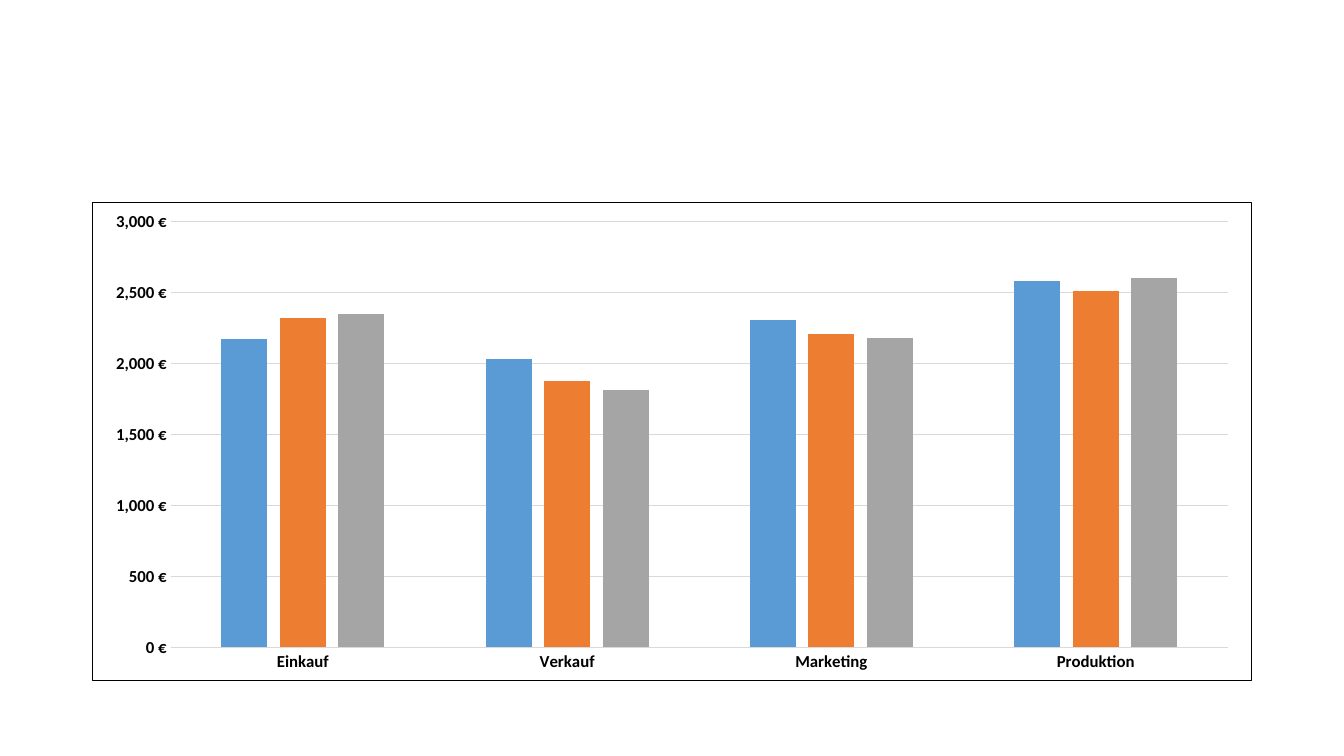
from lxml.etree import fromstring
from pptx import Presentation
from pptx.chart.data import CategoryChartData
from pptx.dml.color import RGBColor
from pptx.enum.chart import XL_CHART_TYPE, XL_TICK_MARK
from pptx.util import Emu, Pt

BLACK = RGBColor(0x00, 0x00, 0x00)
WHITE = RGBColor(0xFF, 0xFF, 0xFF)
SILVER = RGBColor(0xD9, 0xD9, 0xD9)
BLUE = RGBColor(0x5B, 0x9B, 0xD5)
ORANGE = RGBColor(0xED, 0x7D, 0x31)
GREY = RGBColor(0xA5, 0xA5, 0xA5)

AREAS = ["Einkauf", "Verkauf", "Marketing", "Produktion"]
COSTS = [
    ("Series 1", [2170, 2030, 2310, 2580], BLUE),
    ("Series 2", [2320, 1880, 2210, 2510], ORANGE),
    ("Series 3", [2350, 1810, 2180, 2600], GREY),
]

FRAME = """<c:spPr xmlns:c="http://schemas.openxmlformats.org/drawingml/2006/chart"
  xmlns:a="http://schemas.openxmlformats.org/drawingml/2006/main">
  <a:solidFill><a:srgbClr val="{fill}"/></a:solidFill>
  <a:ln w="{width}"><a:solidFill><a:srgbClr val="{line}"/></a:solidFill></a:ln>
</c:spPr>"""


class Painter:
    """Holds the style and the current slide, and adds elements measured in px."""

    scale = 9525
    face = "Calibri"
    thin = Pt(0.75)

    def __init__(self, deck):
        deck.slide_width, deck.slide_height = self.px(1280), self.px(720)
        self.slide = deck.slides.add_slide(deck.slide_layouts[6])

    def px(self, count):
        return Emu(count * self.scale)

    def font(self, font, size, bold=False):
        font.name, font.size, font.bold = self.face, Pt(size), bold
        font.color.rgb = BLACK

    def line(self, line, color):
        line.color.rgb = color
        line.width = self.thin

    def axis(self, axis):
        axis.major_tick_mark = axis.minor_tick_mark = XL_TICK_MARK.NONE
        self.font(axis.tick_labels.font, 12, True)

    def frame(self, chart):
        xml = FRAME.format(fill=WHITE, line=BLACK, width=int(self.thin))
        chart.font._element.getparent()
        chart._chartSpace.chart.addnext(fromstring(xml))

    def columns(self, box, names, series, unit):
        data = CategoryChartData()
        data.categories = names
        for name, values, _ in series:
            data.add_series(name, values)
        kind = XL_CHART_TYPE.COLUMN_CLUSTERED
        chart = self.slide.shapes.add_chart(kind, *map(self.px, box), data).chart
        chart.has_title = chart.has_legend = False
        self.font(chart.font, 10)

        plot = chart.plots[0]
        plot.vary_by_categories = False
        plot.gap_width, plot.overlap = 219, -27
        for bars, (_, _, color) in zip(plot.series, series):
            bars.format.fill.solid()
            bars.format.fill.fore_color.rgb = color

        self.axis(chart.category_axis)
        self.line(chart.category_axis.format.line, SILVER)

        scale = chart.value_axis
        self.axis(scale)
        scale.minimum_scale, scale.maximum_scale, scale.major_unit = 0, 3000, 500
        scale.format.line.fill.background()
        self.line(scale.major_gridlines.format.line, SILVER)
        scale.tick_labels.number_format = unit
        scale.tick_labels.number_format_is_linked = False
        self.frame(chart)


def main():
    deck = Presentation()
    painter = Painter(deck)
    painter.columns((88, 192, 1104, 457), AREAS, COSTS, '#,##0\\ "€"')
    deck.save("out.pptx")


if __name__ == "__main__":
    main()
